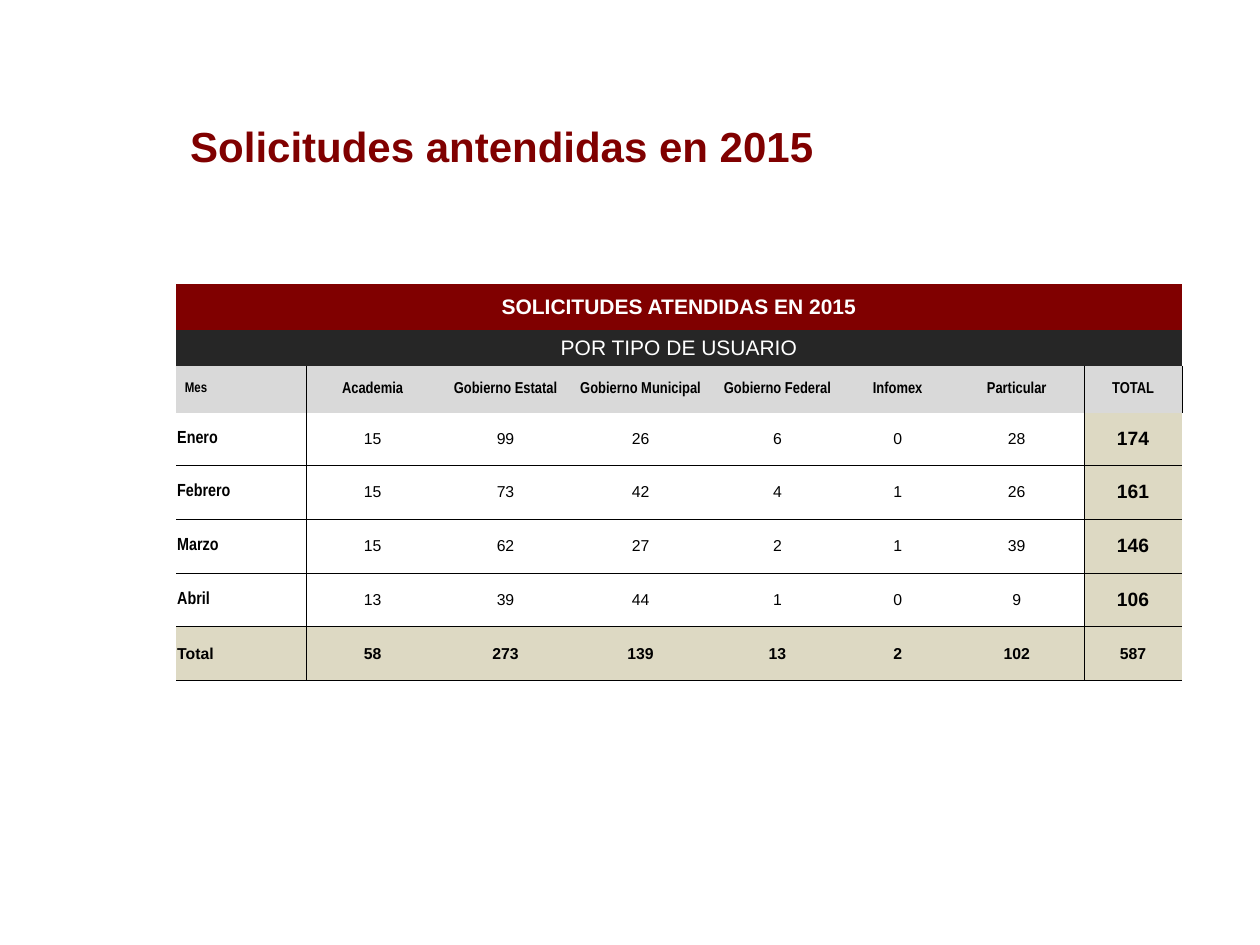
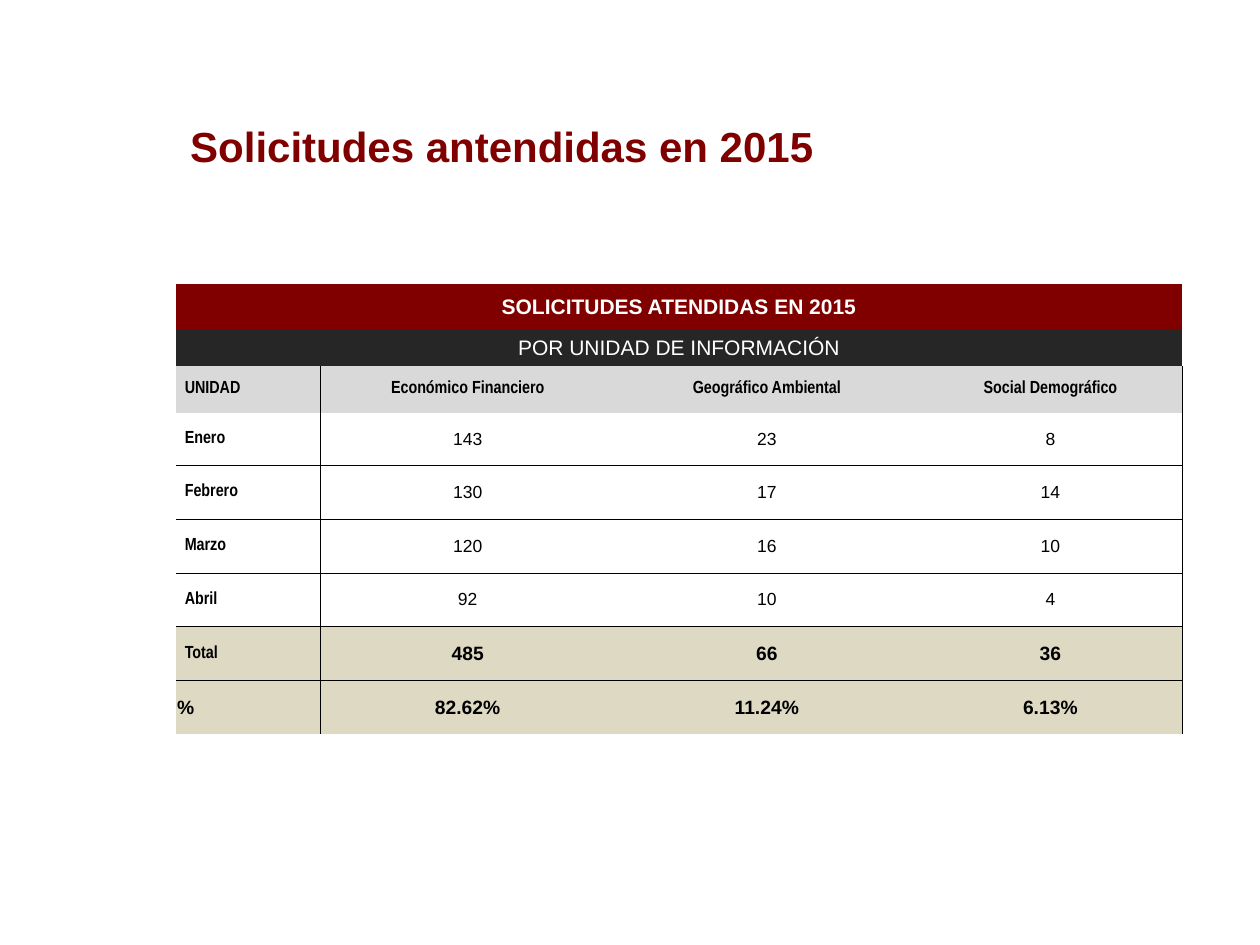
from dataclasses import dataclass

from lxml import etree
from pptx import Presentation
from pptx import util as u
from pptx.dml import color
from pptx.enum import text
from pptx.oxml import ns

MAROON, CHARCOAL, GREY, BEIGE = "800000", "262626", "D9D9D9", "DDD9C3"
WHITE, BLACK = "FFFFFF", "000000"
WIDE, TIGHT = 5, 0.7
BAND_HEIGHTS = [26.3, 20.4, 27, 30]
ROW_HEIGHT = 30.75
FIRST_HEADER, FIRST_RULE = 2, 4


def rgb(value):
    return color.RGBColor.from_string(value)


@dataclass
class Style:
    size: float
    bold: bool = True
    name: str = "Arial"
    color: str = BLACK
    align: text.PP_ALIGN = text.PP_ALIGN.CENTER
    inset: float = TIGHT
    fill: str = ""


@dataclass
class Row:
    values: list
    label: Style
    value: Style
    last: Style = None

    def style(self, column):
        if column == 0:
            return self.label
        if column == len(self.values) - 1 and self.last:
            return self.last
        return self.value


def label(size, inset=TIGHT, name="Arial Narrow", fill=""):
    return Style(size, name=name, align=text.PP_ALIGN.LEFT, inset=inset, fill=fill)


class Report:
    title_style = Style(24, color=MAROON, align=text.PP_ALIGN.LEFT)
    banner_style = Style(12, color=WHITE, inset=WIDE, fill=MAROON)
    subtitle_style = Style(12, False, color=WHITE, inset=WIDE, fill=CHARCOAL)

    def __init__(self):
        self.deck = Presentation()
        self.deck.slide_width, self.deck.slide_height = u.Pt(720), u.Pt(540)
        self.page = None

    def add_page(self, title):
        self.page = self.deck.slides.add_slide(self.deck.slide_layouts[5])
        box = self.page.shapes.title
        box.left, box.top = u.Pt(101.5), u.Pt(62.6)
        box.width, box.height = u.Pt(586.8), u.Pt(405.4)
        frame = box.text_frame
        frame.auto_size = text.MSO_AUTO_SIZE.NONE
        frame.vertical_anchor = text.MSO_ANCHOR.TOP
        frame.margin_top = u.Pt(6.3)
        self.add_words(frame, title, self.title_style)

    def add_words(self, frame, words, style):
        para = frame.paragraphs[0]
        para.alignment = style.align
        span = para.add_run()
        span.text = words
        span.font.name, span.font.size = style.name, u.Pt(style.size)
        span.font.bold = style.bold
        span.font.color.rgb = rgb(style.color)

    def add_edges(self, cell, edges):
        properties = cell._tc.get_or_add_tcPr()
        for side, drawn in edges.items():
            line = etree.SubElement(properties, ns.qn(f"a:ln{side}"), w=str(u.Pt(0.5)))
            if drawn:
                fill = etree.SubElement(line, ns.qn("a:solidFill"))
                etree.SubElement(fill, ns.qn("a:srgbClr"), val=BLACK)
            else:
                etree.SubElement(line, ns.qn("a:noFill"))

    def add_cell(self, cell, words, style, edges):
        self.add_edges(cell, edges)
        if style.fill:
            cell.fill.solid()
            cell.fill.fore_color.rgb = rgb(style.fill)
        else:
            cell.fill.background()
        cell.vertical_anchor = text.MSO_ANCHOR.MIDDLE
        cell.margin_left = cell.margin_right = u.Pt(style.inset)
        cell.margin_top = cell.margin_bottom = u.Pt(0)
        if words:
            self.add_words(cell.text_frame, words, style)

    def add_table(self, subtitle, widths, body, verticals):
        blanks = [""] * (len(widths) - 1)
        banners = [("SOLICITUDES ATENDIDAS EN 2015", self.banner_style),
                   (subtitle, self.subtitle_style)]
        rows = [Row([words] + blanks, style, style) for words, style in banners] + body
        heights = BAND_HEIGHTS + [ROW_HEIGHT] * (len(rows) - len(BAND_HEIGHTS))
        table = self.page.shapes.add_table(
            len(rows), len(widths), u.Pt(100.6), u.Pt(162.3),
            u.Pt(sum(widths)), u.Pt(sum(heights))).table
        for column, width in zip(table.columns, widths):
            column.width = u.Pt(width)
        for line, height in zip(table.rows, heights):
            line.height = u.Pt(height)
        for index in range(len(banners)):
            table.cell(index, 0).merge(table.cell(index, len(widths) - 1))
        rules = range(FIRST_RULE, 9)
        for r, row in enumerate(rows):
            for c, words in enumerate(row.values):
                edges = {"L": r in verticals.get(c, ()), "R": r in verticals.get(c + 1, ()),
                         "T": r in rules, "B": r + 1 in rules}
                self.add_cell(table.cell(r, c), words, row.style(c), edges)


def add_user_types(report):
    report.add_page("Solicitudes antendidas en 2015")
    header = Style(9, name="Arial Narrow", fill=GREY)
    month_total, total = Style(11, fill=BEIGE), Style(9, fill=BEIGE)
    months = [
        ["Enero", "15", "99", "26", "6", "0", "28", "174"],
        ["Febrero", "15", "73", "42", "4", "1", "26", "161"],
        ["Marzo", "15", "62", "27", "2", "1", "39", "146"],
        ["Abril", "13", "39", "44", "1", "0", "9", "106"],
    ]
    body = [Row(["Mes", "Academia", "Gobierno Estatal", "Gobierno Municipal",
                 "Gobierno Federal", "Infomex", "Particular", "TOTAL"],
                label(8, WIDE, fill=GREY), header)]
    body += [Row(month, label(10), Style(9, False), month_total) for month in months]
    body.append(Row(["Total", "58", "273", "139", "13", "2", "102", "587"],
                    label(9, name="Arial", fill=BEIGE), total))
    all_rows = range(FIRST_HEADER, 8)
    report.add_table("POR TIPO DE USUARIO", [74.5, 75.6, 76.4, 77.9, 78.6, 58.8, 77.3, 55.8],
                     body, {1: all_rows, 7: all_rows, 8: [FIRST_HEADER]})


def add_information_units(report):
    report.add_page("Solicitudes antendidas en 2015")
    months = [
        ["Enero", "143", "23", "8"],
        ["Febrero", "130", "17", "14"],
        ["Marzo", "120", "16", "10"],
        ["Abril", "92", "10", "4"],
    ]
    total = Style(11, fill=BEIGE)
    body = [Row(["UNIDAD", "Económico Financiero", "Geográfico Ambiental", "Social Demográfico"],
                label(10, WIDE, fill=GREY), Style(10, name="Arial Narrow", fill=GREY))]
    body += [Row(month, label(10, WIDE), Style(10, False)) for month in months]
    body += [
        Row(["Total", "485", "66", "36"], label(10, WIDE, fill=BEIGE), total),
        Row(["%", "82.62%", "11.24%", "6.13%"], label(11, name="Arial", fill=BEIGE), total),
    ]
    all_rows = range(FIRST_HEADER, 9)
    report.add_table("POR UNIDAD DE INFORMACIÓN", [82.5, 168.3, 173.6, 150.5],
                     body, {1: all_rows, 4: all_rows})


def main():
    report = Report()
    add_user_types(report)
    add_information_units(report)
    report.deck.save("out.pptx")


if __name__ == "__main__":
    main()
